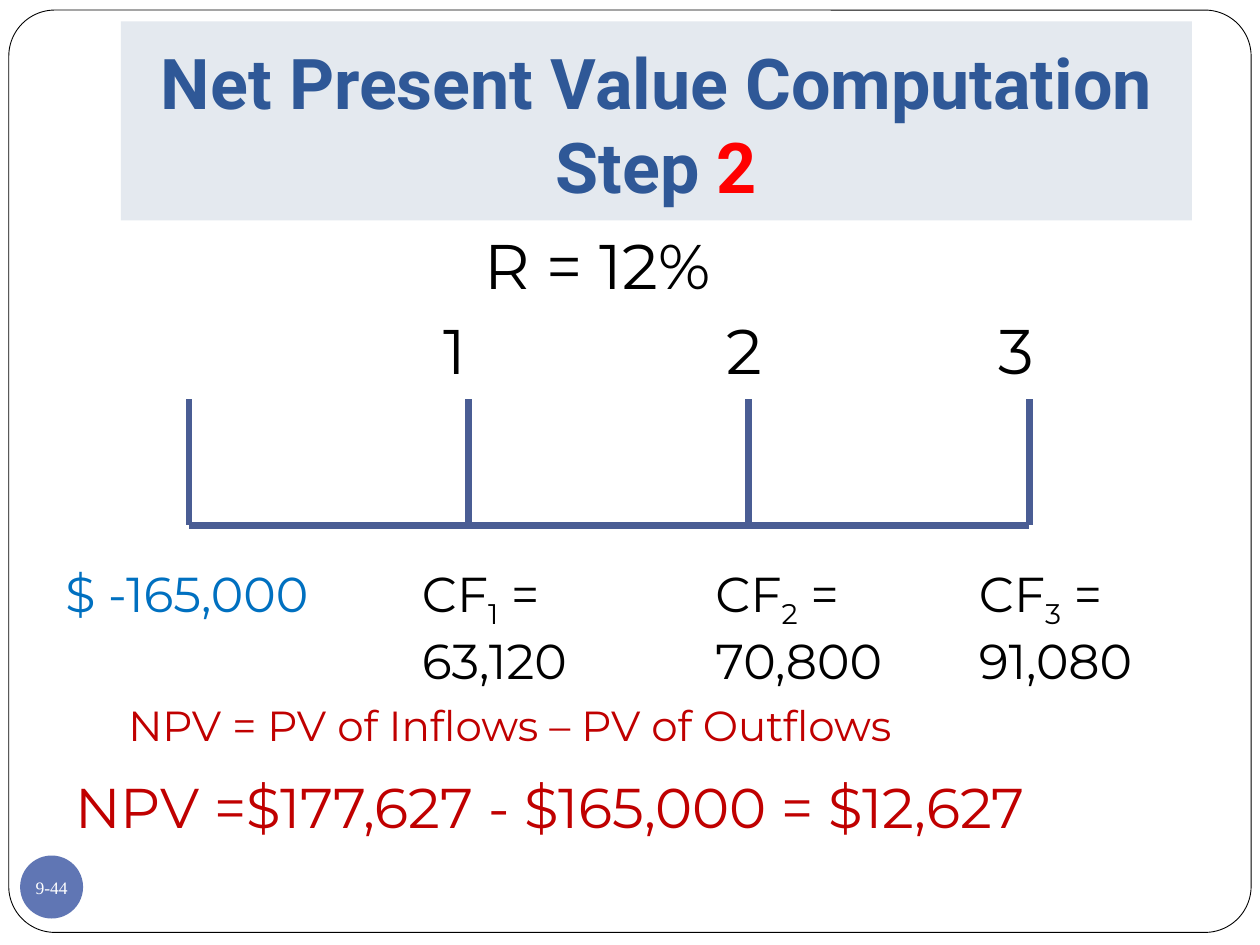
from lxml.etree import SubElement
from pptx import Presentation
from pptx.dml.color import RGBColor
from pptx.enum.shapes import MSO_CONNECTOR, MSO_SHAPE
from pptx.enum.text import MSO_ANCHOR, PP_ALIGN
from pptx.oxml.ns import qn
from pptx.util import Inches, Pt

COLUMNS_PER_INCH = 12
BODY_FONT = "Montserrat"
BLACK, WHITE, DEEP_RED, BRIGHT_RED = "000000", "FFFFFF", "C00000", "FF0000"
TITLE_BLUE, OUTLAY_BLUE, AXIS_BLUE = "2F5897", "0070C0", "4A5D94"
BADGE_BLUE, TITLE_BAND = "6076B4", "E4E9EF"


def grid(*cells):
    """Turn counts of grid cells into slide lengths."""
    return [Inches(round(cell / COLUMNS_PER_INCH, 2)) for cell in cells]


def color(hex_code):
    """Turn a hex string into a colour."""
    return RGBColor.from_string(hex_code)


def write(owner, parts, align=PP_ALIGN.LEFT, **frame_format):
    """Write one paragraph of (text, size, hex colour, extra format) parts."""
    frame = owner.text_frame
    for attribute, value in {"word_wrap": True, **frame_format}.items():
        setattr(frame, attribute, value)
    paragraph = frame.paragraphs[0]
    paragraph.alignment = align
    for text, size, hex_code, extra in parts:
        run = paragraph.add_run()
        run.text = text
        for attribute, value in {"name": BODY_FONT, "size": Pt(size), **extra}.items():
            setattr(run.font, attribute, value)
        run.font.color.rgb = color(hex_code)
    return paragraph


def add_panel(slide, preset, cells, fill, outline=None):
    """Add a filled preset shape without shadow."""
    panel = slide.shapes.add_shape(preset, *grid(*cells))
    panel.shadow.inherit = False
    panel.fill.solid()
    panel.fill.fore_color.rgb = color(fill)
    if outline:
        panel.line.color.rgb = color(outline)
        panel.line.width = Pt(0.5)
    else:
        panel.line.fill.background()
    return panel


def add_label(slide, cells, text, size, hex_code=BLACK):
    """Add a text box holding one line of body text."""
    label = slide.shapes.add_textbox(*grid(*cells))
    write(label, [(text, size, hex_code, {})])


def add_cash_flow(slide, cells, period, amount):
    """Add a cash flow label with its period as a subscript."""
    flow = slide.shapes.add_textbox(*grid(*cells))
    parts = [(text, 28, BLACK, {}) for text in ("CF", period, f" = {amount}")]
    subscript = write(flow, parts).runs[1]
    subscript.font._element.set("baseline", "-25000")


def add_axis_line(slide, *ends):
    """Add one straight stroke of the timeline."""
    stroke = slide.shapes.add_connector(MSO_CONNECTOR.STRAIGHT, *grid(*ends))
    stroke.line.color.rgb = color(AXIS_BLUE)
    stroke.line.width = Pt(4)
    SubElement(stroke._element.spPr, qn("a:effectLst"))


def add_timeline(slide):
    """Add the axis, its ticks, the periods and the cash flows."""
    start, end, top, base = 18, 98, 38, 50
    add_axis_line(slide, start, base, end, base)
    for tick in range(4):
        x = start + tick * (end - start) / 3
        add_axis_line(slide, x, top, x, base)
    add_label(slide, (5, 53, 29, 6.8), "$ -165,000", 28, OUTLAY_BLUE)
    periods = [
        ("1", 41, 8, "63,120", 39, 28),
        ("2", 68, 11, "70,800", 67, 20),
        ("3", 94, 10, "91,080", 92, 21),
    ]
    for period, left, width, amount, flow_left, flow_width in periods:
        add_label(slide, (left, 29, width, 8.5), period, 36)
        add_cash_flow(slide, (flow_left, 53, flow_width, 12.5), period, amount)


def add_header(slide):
    """Add the slide frame, the page badge and the title band."""
    border = add_panel(slide, MSO_SHAPE.ROUNDED_RECTANGLE,
                       (0.85, 0.95, 118.3, 87.85), WHITE, BLACK)
    border.adjustments[0] = 0.05
    badge = add_panel(slide, MSO_SHAPE.OVAL, (1.9, 81.5, 6, 6), BADGE_BLUE)
    margins = dict.fromkeys(
        ("margin_left", "margin_top", "margin_right", "margin_bottom"), 0)
    write(badge, [("9-44", 10, WHITE, {"name": "Times New Roman"})], PP_ALIGN.CENTER,
          **{**margins, "word_wrap": False, "vertical_anchor": MSO_ANCHOR.MIDDLE})
    title = add_panel(slide, MSO_SHAPE.RECTANGLE, (11.5, 2, 102, 19), TITLE_BAND)
    heading = {"name": "Roboto", "bold": True}
    write(title, [("Net Present Value Computation Step ", 40, TITLE_BLUE, heading),
                  ("2", 40, BRIGHT_RED, heading)], PP_ALIGN.CENTER,
          vertical_anchor=MSO_ANCHOR.BOTTOM, margin_bottom=Inches(0.1))


def main():
    """Build and save the slide."""
    deck = Presentation()
    deck.slide_width, deck.slide_height = grid(120, 90)
    slide = deck.slides.add_slide(deck.slide_layouts[6])
    add_header(slide)
    add_label(slide, (45, 21, 36, 8.5), "R = 12%", 36)
    add_timeline(slide)
    add_label(slide, (11, 66, 94, 6), "NPV = PV of Inflows – PV of Outflows", 24, DEEP_RED)
    add_label(slide, (6, 73, 114, 7.7),
              "NPV =$177,627 - $165,000 = $12,627", 32, DEEP_RED)
    deck.save("out.pptx")


if __name__ == "__main__":
    main()
